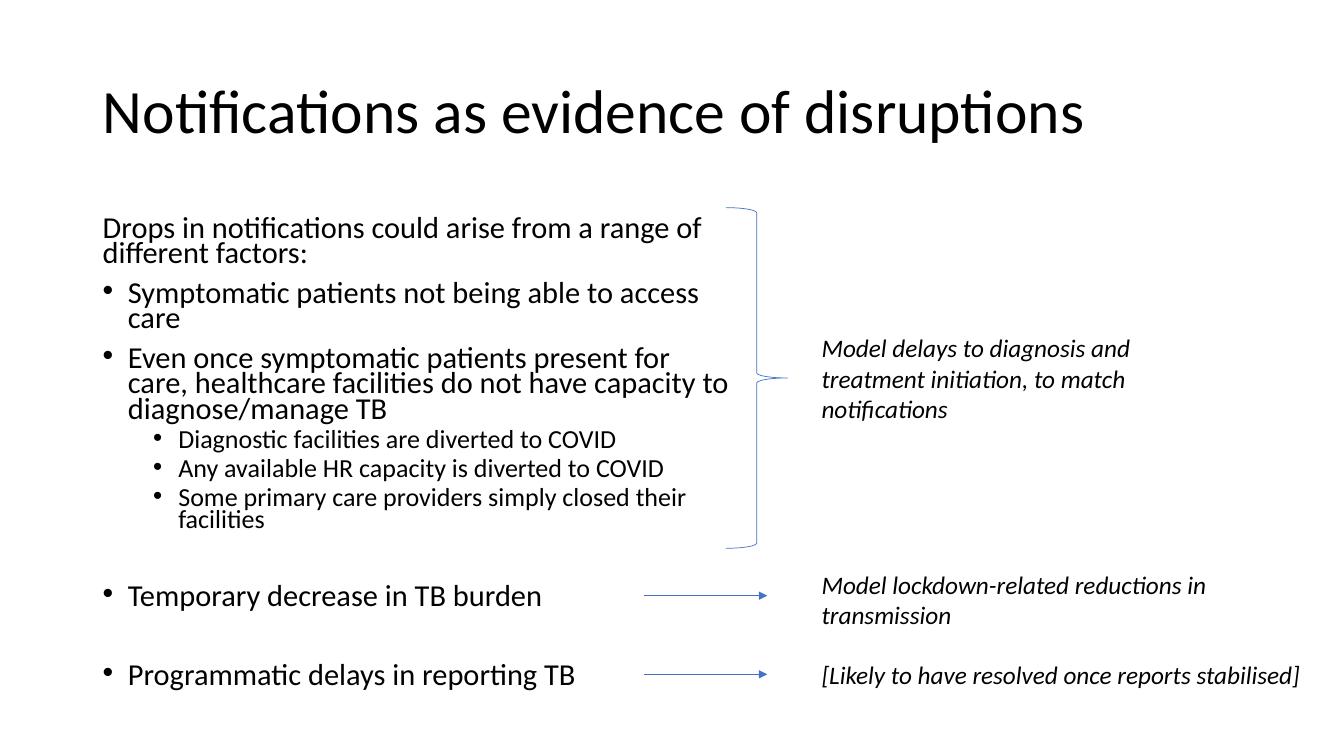
import pptx
import pptx.util
import pptx.dml.color
import pptx.enum.shapes
import pptx.enum.text
import pptx.oxml
import pptx.oxml.ns
from dataclasses import dataclass

Inches = pptx.util.Inches
Pt = pptx.util.Pt


@dataclass(frozen=True)
class Theme:
    font: str = "Calibri"
    text: str = "000000"
    accent: str = "4472C4"
    title: float = 44
    body: float = 21.7
    sub: float = 18.6
    note: float = 18
    line: float = 0.5


THEME = Theme()

FACTORS = [
    ("intro", 10, "Drops in notifications could arise from a range of different factors:"),
    ("bullet", 10, "Symptomatic patients not being able to access care"),
    ("bullet", 10, "Even once symptomatic patients present for care, healthcare facilities "
     "do not have capacity to diagnose/manage TB"),
    ("sub", 5, "Diagnostic facilities are diverted to COVID"),
    ("sub", 5, "Any available HR capacity is diverted to COVID"),
    ("sub", 5, "Some primary care providers simply closed their facilities"),
    ("bullet", 38, "Temporary decrease in TB burden"),
    ("bullet", 38, "Programmatic delays in reporting TB"),
]
LEVELS = {
    "intro": (0, None, THEME.body),
    "bullet": (0, 0.25, THEME.body),
    "sub": (1, 0.75, THEME.sub),
}
NOTES = [
    ((8.05, 3.25, 3.83, 1.01), True,
     "Model delays to diagnosis and treatment initiation, to match notifications"),
    ((8.05, 5.6, 4.93, 0.71), True, "Model lockdown-related reductions in transmission"),
    ((8.05, 6.49, 5, 0.4), False, "[Likely to have resolved once reports stabilised]"),
]
ARROW_TOPS = (5.91, 6.69)


def apply(target, values):
    for name, value in values.items():
        setattr(target, name, value)


def rgb(color):
    return pptx.dml.color.RGBColor.from_string(color)


def add_run(p, text, size, italic=False):
    r = p.add_run()
    r.text = text
    apply(r.font, {"name": THEME.font, "size": Pt(size), "italic": italic})
    r.font.color.rgb = rgb(THEME.text)


def add_box(s, box, wrap=True):
    tf = s.shapes.add_textbox(*map(Inches, box)).text_frame
    tf.word_wrap = wrap
    return tf


def set_title(s, text):
    sp = s.shapes.title
    apply(sp, dict(zip(("left", "top", "width", "height"),
                       map(Inches, (0.92, 0.4, 10.22, 1.45)))))
    tf = sp.text_frame
    apply(tf, {"word_wrap": True,
               "auto_size": pptx.enum.text.MSO_AUTO_SIZE.NONE,
               "vertical_anchor": pptx.enum.text.MSO_ANCHOR.MIDDLE})
    p = tf.paragraphs[0]
    apply(p, {"alignment": pptx.enum.text.PP_ALIGN.LEFT, "line_spacing": 0.9})
    add_run(p, text, THEME.title)


def add_bullet(p, indent):
    pPr = p._p.get_or_add_pPr()
    pPr.set("marL", str(Inches(indent)))
    pPr.set("indent", str(Inches(-0.25)))
    for tag, attr, value in (("a:buFont", "typeface", "Arial"), ("a:buChar", "char", "•")):
        bullet = pptx.oxml.parse_xml(f"<{tag} {pptx.oxml.ns.nsdecls('a')}/>")
        bullet.set(attr, value)
        pPr.append(bullet)


def add_factors(s):
    tf = add_box(s, (0.92, 2.11, 6.48, 5))
    for i, (kind, before, text) in enumerate(FACTORS):
        level, indent, size = LEVELS[kind]
        p = tf.add_paragraph() if i else tf.paragraphs[0]
        apply(p, {"level": level, "line_spacing": 0.7, "space_before": Pt(before)})
        if indent:
            add_bullet(p, indent)
        add_run(p, text, size)


def add_note(s, box, wrap, text):
    tf = add_box(s, box, wrap)
    tf.auto_size = pptx.enum.text.MSO_AUTO_SIZE.SHAPE_TO_FIT_TEXT
    add_run(tf.paragraphs[0], text, THEME.note, italic=True)


def style_line(sp):
    sp.line.color.rgb = rgb(THEME.accent)
    sp.line.width = Pt(THEME.line)


def add_arrow(s, top):
    sp = s.shapes.add_connector(pptx.enum.shapes.MSO_CONNECTOR.STRAIGHT,
                                *map(Inches, (6.39, top, 7.61, top)))
    style_line(sp)
    ns = pptx.oxml.ns.nsdecls("a")
    sp.line._get_or_add_ln().append(pptx.oxml.parse_xml(f'<a:tailEnd {ns} type="triangle"/>'))
    sp._element.spPr.append(pptx.oxml.parse_xml(f"<a:effectLst {ns}/>"))


def add_brace(s):
    sp = s.shapes.add_shape(pptx.enum.shapes.MSO_SHAPE.RIGHT_BRACE,
                            *map(Inches, (7.2, 2.06, 0.61, 3.38)))
    sp.shadow.inherit = False
    sp.fill.background()
    style_line(sp)


def main():
    prs = pptx.Presentation()
    apply(prs, {"slide_width": Inches(13.33), "slide_height": Inches(7.5)})
    s = prs.slides.add_slide(prs.slide_layouts.get_by_name("Title Only"))
    set_title(s, "Notifications as evidence of disruptions")
    add_factors(s)
    add_brace(s)
    for top in ARROW_TOPS:
        add_arrow(s, top)
    for box, wrap, text in NOTES:
        add_note(s, box, wrap, text)
    prs.save("out.pptx")


if __name__ == "__main__":
    main()
